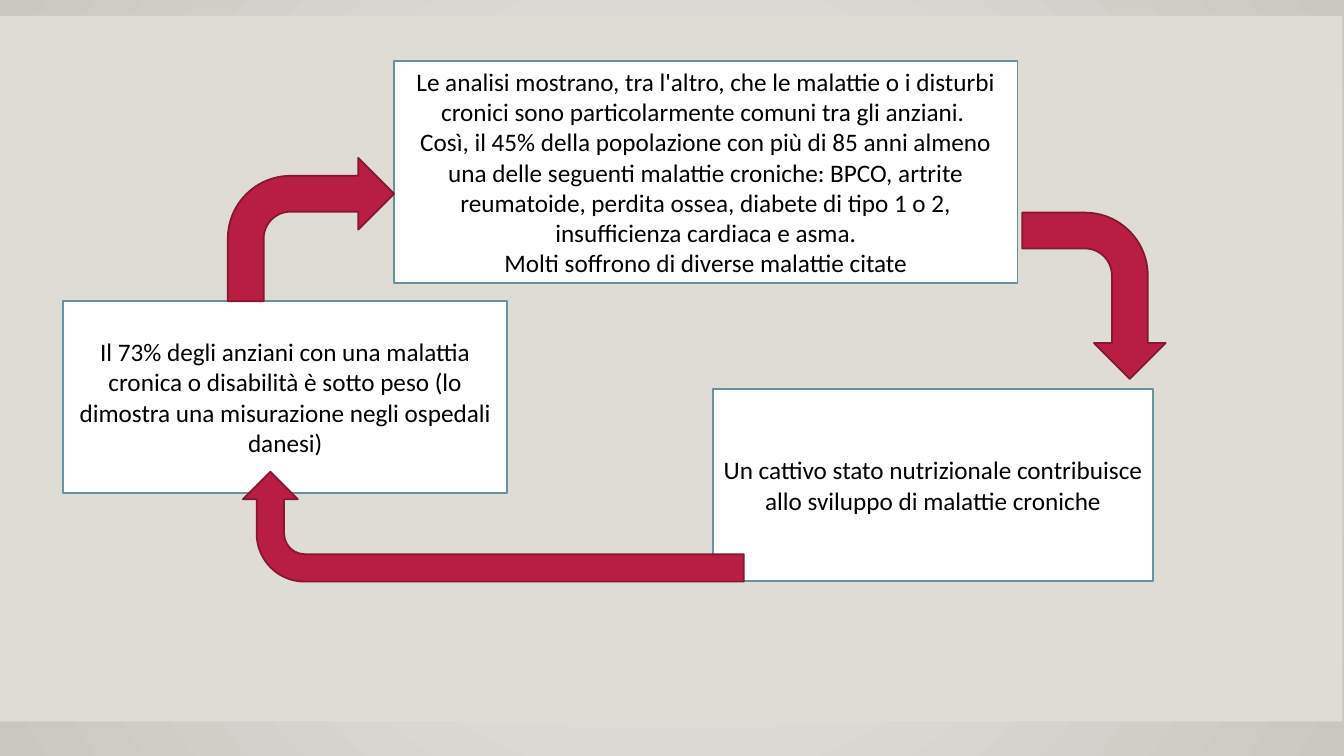
import pptx
import pptx.util
import pptx.dml.color
import pptx.enum.shapes
import pptx.enum.text
import pptx.oxml.ns
from lxml import etree

Pt = pptx.util.Pt
SHAPE = pptx.enum.shapes.MSO_SHAPE
FONT = {"name": "Calibri", "size": Pt(18)}
FRAME = {"word_wrap": True, "vertical_anchor": pptx.enum.text.MSO_ANCHOR.MIDDLE}


def rgb(value):
    return pptx.dml.color.RGBColor.from_string(value)


def apply(target, formats):
    for name, value in formats.items():
        setattr(target, name, value)


class Deck:
    colors = {"panel": "DFDBD5", "box": "FFFFFF", "box_line": "6892A0",
              "arrow": "B71E42", "arrow_line": "871631", "text": "000000"}

    def __init__(self):
        self.prs = pptx.Presentation()
        apply(self.prs, {"slide_width": Pt(960), "slide_height": Pt(540)})
        self.s = self.prs.slides.add_slide(self.prs.slide_layouts[6])

    def background(self, center, edge):
        fill = self.s.background.fill
        fill.gradient()
        for stop, color in zip(fill.gradient_stops, (center, edge)):
            stop.color.rgb = rgb(color)
        qn = pptx.oxml.ns.qn
        grad = self.s.background._cSld.find(".//" + qn("a:gradFill"))
        grad.remove(grad.find(qn("a:lin")))
        radial = etree.SubElement(grad, qn("a:path"), {"path": "circle"})
        etree.SubElement(radial, qn("a:fillToRect"),
                         dict.fromkeys("ltrb", "50000"))

    def shape(self, kind, bounds, fill, line=None):
        sp = self.s.shapes.add_shape(kind, *map(Pt, bounds))
        sp.shadow.inherit = False
        sp.fill.solid()
        sp.fill.fore_color.rgb = rgb(self.colors[fill])
        if line:
            sp.line.color.rgb = rgb(self.colors[line])
            sp.line.width = Pt(1.25)
        else:
            sp.line.fill.background()
        return sp

    def panel(self, *bounds):
        self.shape(SHAPE.RECTANGLE, bounds, "panel")

    def box(self, bounds, *paragraphs):
        tf = self.shape(SHAPE.RECTANGLE, bounds, "box", "box_line").text_frame
        apply(tf, FRAME)
        for i, text in enumerate(paragraphs):
            p = tf.add_paragraph() if i else tf.paragraphs[0]
            p.alignment = pptx.enum.text.PP_ALIGN.CENTER
            r = p.add_run()
            r.text = text
            apply(r.font, FONT)
            r.font.color.rgb = rgb(self.colors["text"])

    def arrow(self, bounds, rotation=0):
        sp = self.shape(SHAPE.BENT_ARROW, bounds, "arrow", "arrow_line")
        sp.rotation = rotation


def main():
    deck = Deck()
    deck.background("ECEAE7", "CAC7C1")
    deck.panel(-1.4, 11.4, 960, 504)
    deck.box((45.2, 214.8, 317, 137.3),
             "Il 73% degli anziani con una malattia cronica o disabilità è sotto "
             "peso (lo dimostra una misurazione negli ospedali danesi)")
    deck.box((281.4, 43.7, 445.4, 158.4),
             "Le analisi mostrano, tra l'altro, che le malattie o i disturbi "
             "cronici sono particolarmente comuni tra gli anziani. ",
             "Così, il 45% della popolazione con più di 85 anni almeno una delle "
             "seguenti malattie croniche: BPCO, artrite reumatoide, perdita ossea, "
             "diabete di tipo 1 o 2, insufficienza cardiaca e asma.",
             "Molti soffrono di diverse malattie citate")
    deck.box((509.2, 277.8, 314.5, 137.3),
             "Un cattivo stato nutrizionale contribuisce allo sviluppo di "
             "malattie croniche")
    deck.arrow((722, 160, 118.8, 102.5), 90)
    deck.arrow((313.2, 197.3, 78.5, 357.8), 270)
    deck.arrow((162.7, 112.8, 118.8, 102.5))
    deck.prs.save("out.pptx")


if __name__ == "__main__":
    main()
